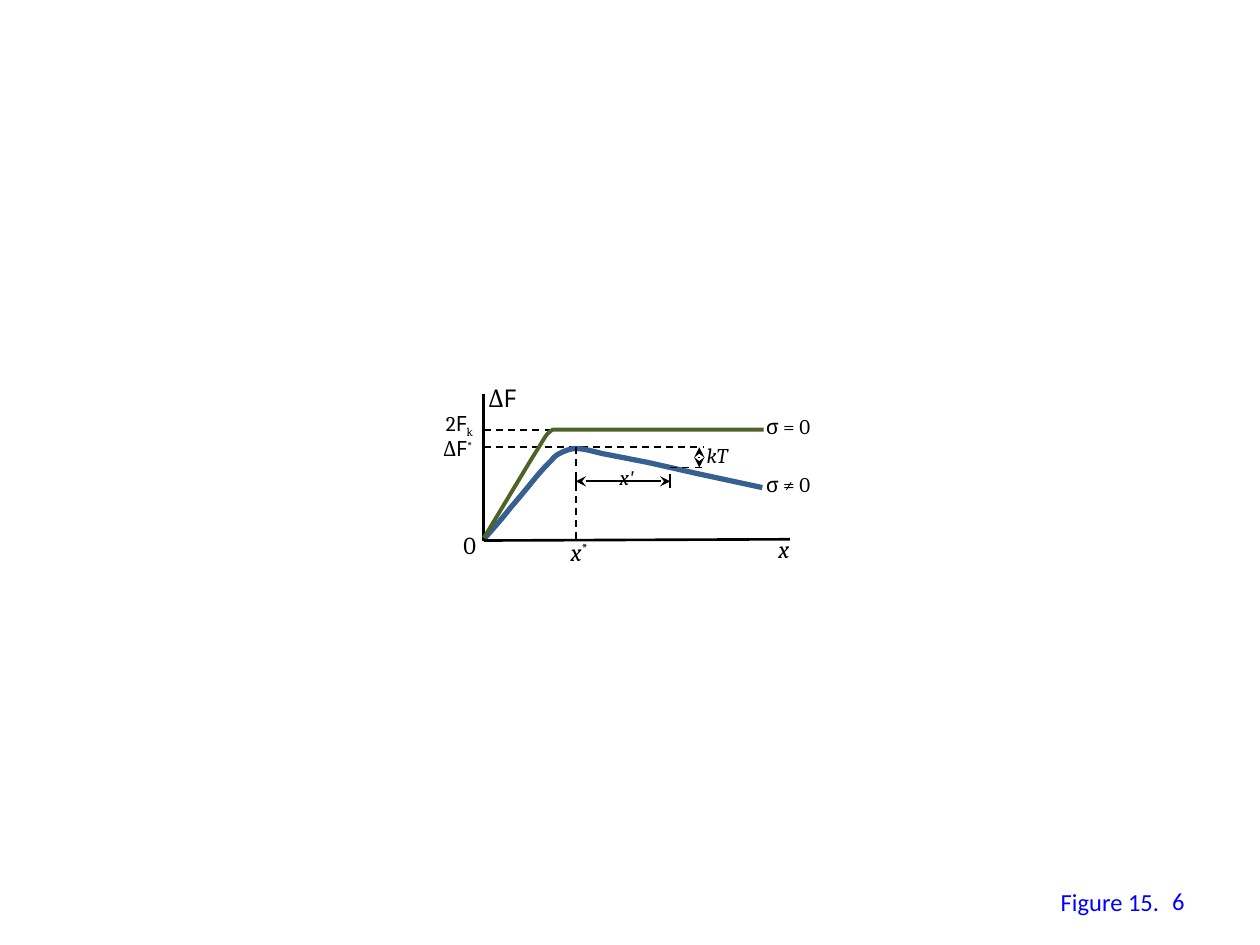
from dataclasses import dataclass

from lxml.etree import SubElement
from pptx import Presentation
from pptx.dml.color import RGBColor
from pptx.enum.dml import MSO_LINE
from pptx.enum.shapes import MSO_CONNECTOR
from pptx.enum.text import MSO_ANCHOR, MSO_AUTO_SIZE, PP_ALIGN
from pptx.oxml.ns import qn
from pptx.util import Inches, Pt


@dataclass(frozen=True)
class Theme:
    ink: RGBColor = RGBColor(0x00, 0x00, 0x00)
    caption: RGBColor = RGBColor(0x00, 0x00, 0xFF)
    stressed: RGBColor = RGBColor(0x37, 0x60, 0x92)
    unstressed: RGBColor = RGBColor(0x4F, 0x62, 0x28)
    serif: str = "Cambria"
    sans: str = "Noto Sans"
    prime: str = "Times New Roman"
    caption_font: str = "Calibri"
    large: int = 14
    small: int = 12
    thin: float = 1
    axis: float = 1.5


@dataclass(frozen=True)
class Box:
    left: float
    top: float
    width: float
    height: float

    def inner(self, left, top, width, height):
        return Box(self.left + left, self.top + top, width, height)

    def point(self, x, y):
        return Inches(self.left + x), Inches(self.top + y)


THEME = Theme()
ITALIC = {"italic": True}
SANS = {"font": THEME.sans}
PRIME = {"italic": True, "font": THEME.prime}
SUPER = {"baseline": 30}
SUB = {"baseline": -25}


def add_text(page, box, spans, size=THEME.large, color=THEME.ink, font=THEME.serif,
             align=PP_ALIGN.LEFT, anchor=MSO_ANCHOR.TOP, wrap=False):
    """Add a text box; spans are (text, format) pairs that override the defaults."""
    shape = page.shapes.add_textbox(*box.point(0, 0), Inches(box.width), Inches(box.height))
    frame = shape.text_frame
    frame.word_wrap = wrap
    frame.auto_size = MSO_AUTO_SIZE.NONE if wrap else MSO_AUTO_SIZE.SHAPE_TO_FIT_TEXT
    frame.vertical_anchor = anchor
    para = frame.paragraphs[0]
    para.alignment = align
    for text, style in spans:
        span = para.add_run()
        span.text = text
        span.font.size = Pt(size)
        span.font.name = style.get("font", font)
        span.font.italic = style.get("italic", False)
        span.font.color.rgb = color
        if "baseline" in style:
            span._r.get_or_add_rPr().set("baseline", str(style["baseline"] * 1000))


def add_line(page, box, start, end, width=THEME.thin, dashed=False, arrows=False):
    line = page.shapes.add_connector(
        MSO_CONNECTOR.STRAIGHT, *box.point(*start), *box.point(*end))
    line.line.color.rgb = THEME.ink
    line.line.width = Pt(width)
    if dashed:
        line.line.dash_style = MSO_LINE.DASH
    if arrows:
        outline = line.line._get_or_add_ln()
        for tag in ("a:headEnd", "a:tailEnd"):
            SubElement(outline, qn(tag), type="stealth")
    SubElement(line._element.spPr, qn("a:effectLst"))


def trace(start, segments, steps=8):
    """Points along segments of one end point (straight) or three points (cubic Bézier)."""
    points = [start]
    for segment in segments:
        if len(segment) == 1:
            points.append(segment[0])
            continue
        knots = (points[-1], *segment)
        for step in range(1, steps + 1):
            t = step / steps
            weights = ((1 - t) ** 3, 3 * t * (1 - t) ** 2, 3 * t * t * (1 - t), t ** 3)
            points.append(tuple(sum(w * k[axis] for w, k in zip(weights, knots))
                                for axis in (0, 1)))
    return points


def add_curve(page, box, points, color, width):
    first, *rest = [box.point(*point) for point in points]
    builder = page.shapes.build_freeform(*first)
    builder.add_line_segments(rest, close=False)
    curve = builder.convert_to_shape()
    curve.shadow.inherit = False
    curve.fill.background()
    curve.line.color.rgb = color
    curve.line.width = Pt(width)


def draw_energy_graph(page, box):
    bottom = box.height
    plateau, peak, drop, span_y = 0.28, 0.42, 0.58, 0.69
    peak_x, drop_x, right = 0.73, 1.48, 1.75

    add_line(page, box, (0, peak), (right, peak), dashed=True)
    add_line(page, box, (0, plateau), (0.55, plateau), dashed=True)
    stressed = trace((0, bottom - 0.01), [
        ((0.07, 1.07), (0.15, 0.98), (0.22, 0.89)),
        ((0.29, 0.81), (0.37, 0.71), (0.42, 0.65)),
        ((0.47, 0.59), (0.51, 0.55), (0.54, 0.52)),
        ((0.57, 0.48), (0.60, 0.47), (0.62, 0.46)),
        ((0.64, 0.45), (0.69, 0.43), (0.73, 0.43)),
        ((0.78, 0.43), (0.82, 0.44), (0.94, 0.47)),
        ((1.30, 0.54),),
        ((1.70, 0.63),),
        ((2.21, 0.74),),
    ])
    add_curve(page, box, stressed, THEME.stressed, 3)

    add_line(page, box, (box.width, bottom - 0.01), (0, bottom), THEME.axis)
    add_line(page, box, (0, 0), (0, bottom), THEME.axis)
    add_line(page, box, (peak_x, peak), (peak_x, bottom), dashed=True)
    unstressed = trace((0, bottom - 0.02), [
        ((0.38, 0.51),),
        ((0.47, 0.37), (0.47, 0.36), (0.50, 0.32)),
        ((0.53, 0.29), (0.53, 0.29), (0.55, plateau)),
        ((2.22, plateau),),
    ])
    add_curve(page, box, unstressed, THEME.unstressed, 2.25)

    add_line(page, box, (peak_x, span_y), (drop_x, span_y), arrows=True)
    for x in (peak_x, drop_x):
        add_line(page, box, (x, span_y + 0.05), (x, span_y - 0.06))
    add_line(page, box, (1.71, drop), (1.71, peak), arrows=True)
    add_line(page, box, (drop_x, drop), (right, drop), dashed=True)

    large_labels = [
        (2.24, 1.06, 0.34, [("x", ITALIC)]),
        (-0.06, -0.14, 0.54, [("Δ", {}), ("F", SANS)]),
        (-0.26, 1.03, 0.30, [("0", {})]),
        (0.59, 1.08, 0.39, [("x", ITALIC), ("*", SUPER)]),
    ]
    small_labels = [
        (-0.42, 0.28, 0.52, [("Δ", {}), ("F", SANS), ("*", SUPER)]),
        (0.98, 0.51, 0.37, [("x", ITALIC), ("'", PRIME)]),
        (2.14, 0.10, 0.56, [("σ = 0", {})]),
        (2.14, 0.56, 0.56, [("σ ≠ 0", {})]),
        (1.67, 0.33, 0.42, [("kT", ITALIC)]),
        (-0.40, 0.08, 0.48, [("2", {}), ("F", SANS), ("k", SUB)]),
    ]
    for labels, size, height in ((large_labels, THEME.large, 0.34),
                                 (small_labels, THEME.small, 0.30)):
        for left, top, width, spans in labels:
            add_text(page, box.inner(left, top, width, height), spans, size=size)


def draw_figure_number(page, box):
    style = {"color": THEME.caption, "font": THEME.caption_font}
    add_text(page, box.inner(1.15, 0.04, 0.99, 0.34), [("Figure 15.", {})], **style)
    add_text(page, box, [("6", {})], align=PP_ALIGN.RIGHT,
             anchor=MSO_ANCHOR.MIDDLE, wrap=True, **style)


def main():
    deck = Presentation()
    deck.slide_width, deck.slide_height = Inches(10), Inches(7.5)
    page = deck.slides.add_slide(deck.slide_layouts[6])
    draw_energy_graph(page, Box(3.84, 3.13, 2.43, 1.16))
    draw_figure_number(page, Box(7.17, 6.95, 2.33, 0.4))
    deck.save("out.pptx")


if __name__ == "__main__":
    main()
